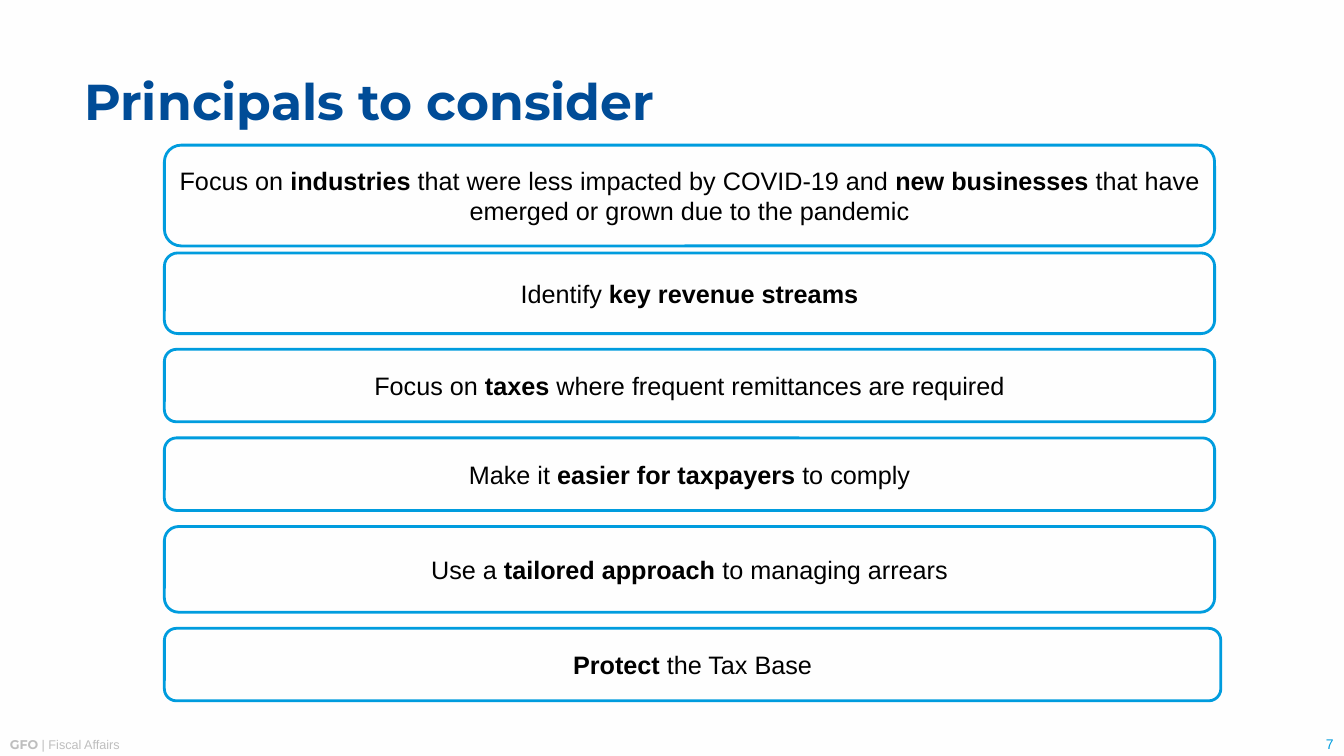
"""Build the slide listing the principles to consider."""
from pptx import Presentation
from pptx.dml.color import RGBColor
from pptx.enum.shapes import MSO_SHAPE as Preset
from pptx.enum.text import MSO_ANCHOR as Anchor, PP_ALIGN as Align
from pptx.util import Pt

COLORS = {"paper": "FEFEFE", "title": "004C97", "accent": "009CDE",
          "text": "000000", "footer": "BEBEBE"}
TITLE = "Principals to consider"
FOOTER = [("GFO ", True, "Montserrat"), ("| Fiscal Affairs", False, "Arial")]
PAGE_NUMBER = "7"

# Each entry: height, width, gap below, and (text, bold) runs.
PRINCIPLES = [
    (72, 750.2, 5, [("Focus on ", False), ("industries", True),
                    (" that were less impacted by COVID-19 and ", False),
                    ("new businesses ", True),
                    ("that have emerged or grown due to the pandemic", False)]),
    (57.6, 750.2, 11.2, [("Identify ", False), ("key revenue streams", True)]),
    (51.8, 750.2, 11.5, [("Focus on ", False), ("taxes", True),
                         (" where frequent remittances are required", False)]),
    (51.8, 750.2, 11.5, [("Make it ", False), ("easier for taxpayers ", True),
                         ("to comply", False)]),
    (61.2, 750.2, 11.5, [("Use a ", False), ("tailored approach ", True),
                         ("to managing arrears", False)]),
    (51.8, 754.6, 0, [("Protect", True), (" the Tax Base", False)]),
]
BOX_LEFT, BOX_TOP = 117.4, 103.7


def color(name):
    """Return the named colour."""
    return RGBColor.from_string(COLORS[name])


def add_text(paragraph, text, size=18, bold=False, font="Arial", ink="text"):
    """Append one formatted run to a paragraph."""
    run = paragraph.add_run()
    run.text = text
    run.font.size = Pt(size)
    run.font.bold = bold
    run.font.name = font
    run.font.color.rgb = color(ink)


def prepare_frame(shape, align, anchor):
    """Set wrapping and alignment, and return the first paragraph."""
    frame = shape.text_frame
    frame.word_wrap = True
    frame.vertical_anchor = anchor
    frame.paragraphs[0].alignment = align
    return frame.paragraphs[0]


def add_title(slide):
    """Place and fill the title placeholder."""
    title = slide.shapes.title
    title.left, title.top, title.width, title.height = Pt(60), Pt(29.5), Pt(838), Pt(89.3)
    paragraph = prepare_frame(title, Align.LEFT, Anchor.MIDDLE)
    frame = title.text_frame
    frame.margin_left = frame.margin_right = frame.margin_top = frame.margin_bottom = 0
    paragraph.line_spacing = 0.9
    add_text(paragraph, TITLE, size=36, bold=True, font="Montserrat", ink="title")


def add_principles(slide):
    """Stack the rounded boxes from top to bottom."""
    top = BOX_TOP
    for height, width, gap, runs in PRINCIPLES:
        box = slide.shapes.add_shape(Preset.ROUNDED_RECTANGLE, Pt(BOX_LEFT), Pt(top),
                                     Pt(width), Pt(height))
        box.shadow.inherit = False
        box.fill.solid()
        box.fill.fore_color.rgb = color("paper")
        box.line.color.rgb = color("accent")
        box.line.width = Pt(2)
        paragraph = prepare_frame(box, Align.CENTER, Anchor.MIDDLE)
        for text, bold in runs:
            add_text(paragraph, text, bold=bold)
        top += height + gap


def add_footer(slide):
    """Add the footer line and the page number."""
    footer = slide.shapes.add_textbox(Pt(0), Pt(522.7), Pt(720), Pt(18))
    paragraph = prepare_frame(footer, Align.LEFT, Anchor.TOP)
    for text, bold, font in FOOTER:
        add_text(paragraph, text, size=9, bold=bold, font=font, ink="footer")
    number = slide.shapes.add_textbox(Pt(864.7), Pt(521.3), Pt(95), Pt(19.4))
    paragraph = prepare_frame(number, Align.RIGHT, Anchor.BOTTOM)
    add_text(paragraph, PAGE_NUMBER, size=10, ink="accent")


def main():
    """Build and save the presentation."""
    presentation = Presentation()
    presentation.slide_width, presentation.slide_height = Pt(960), Pt(540)
    slide = presentation.slides.add_slide(presentation.slide_layouts[5])
    slide.background.fill.solid()
    slide.background.fill.fore_color.rgb = color("paper")
    add_footer(slide)
    add_title(slide)
    add_principles(slide)
    presentation.save("out.pptx")


if __name__ == "__main__":
    main()
